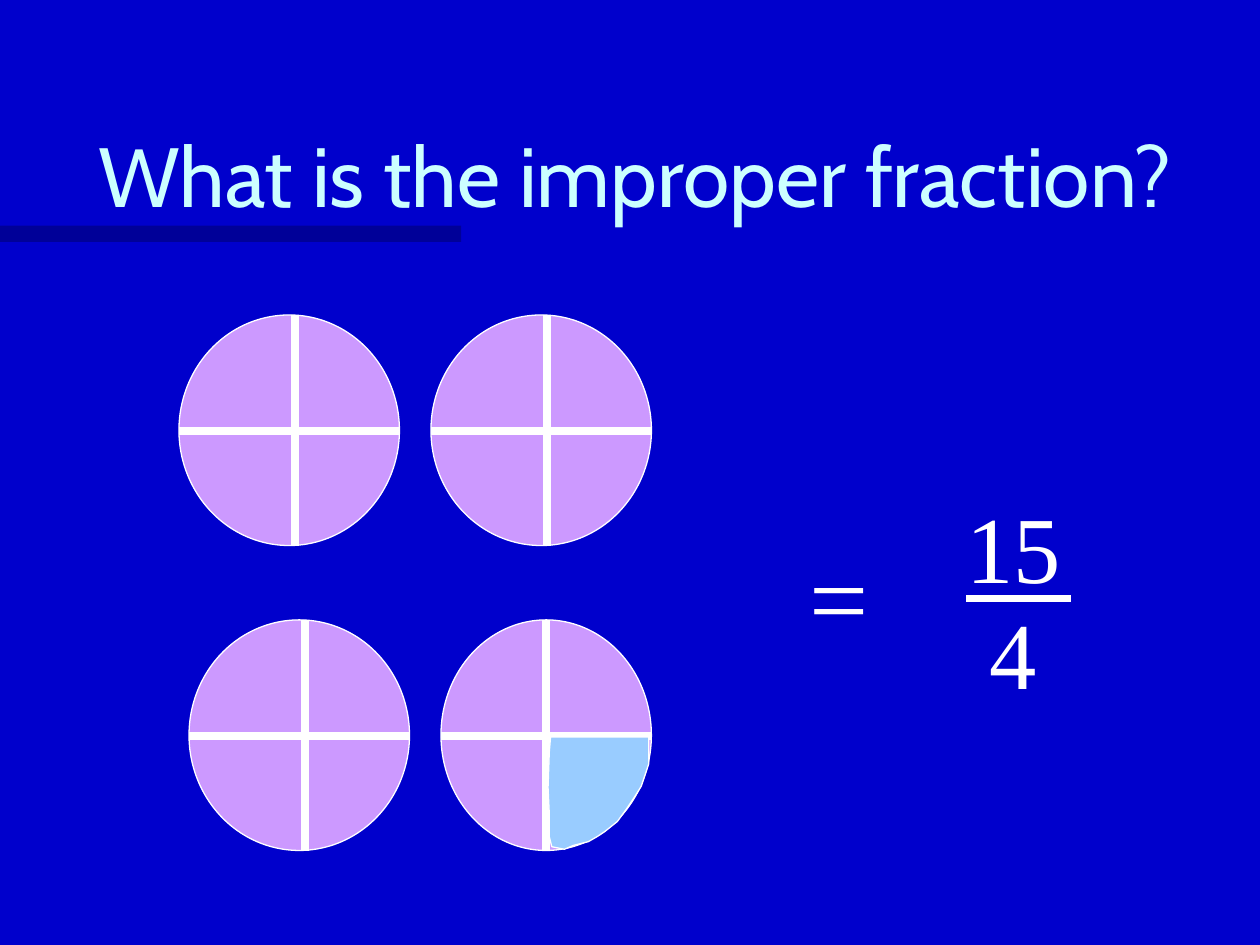
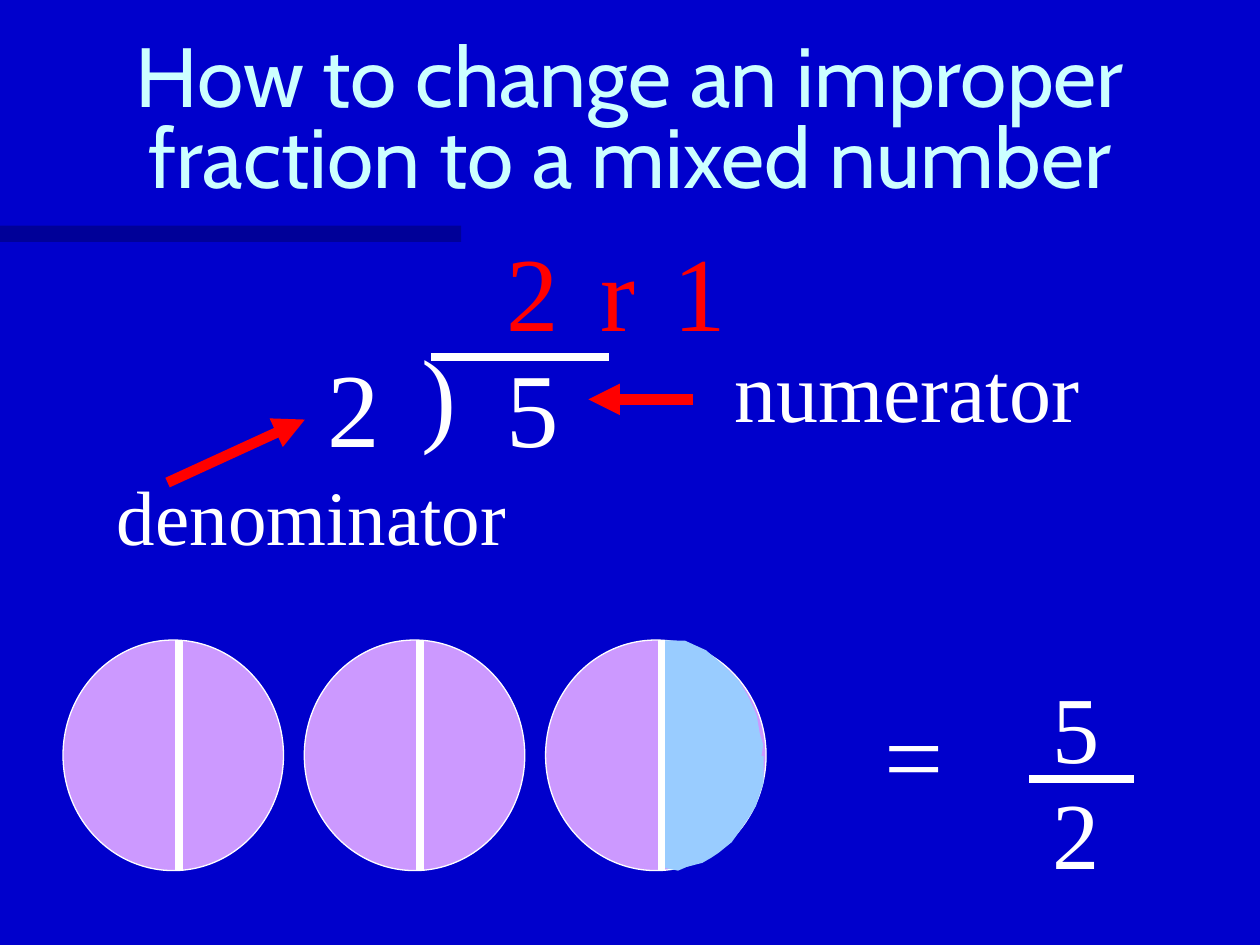
from lxml import etree
from pptx import Presentation
from pptx.dml.color import RGBColor
from pptx.enum.shapes import MSO_CONNECTOR, MSO_SHAPE
from pptx.enum.text import MSO_ANCHOR, MSO_AUTO_SIZE, PP_ALIGN
from pptx.oxml.ns import qn
from pptx.util import Inches, Pt

BACKGROUND, BAND, TITLE = "0000CC", "000066", "CCFFFF"
WHITE, RED, LILAC, SKY = "FFFFFF", "FF0000", "CC99FF", "99CCFF"
TITLE_FONT, BODY_FONT = "Cabin", "Times New Roman"
CIRCLE_WIDTH, CIRCLE_HEIGHT, CUT = 1.75, 1.83, 0.92

# Hand-cut lower right quarter, in hundredths of an inch for a 0.82 x 0.9 box
QUARTER = [(2, 0), (1, 12), (0, 40), (1, 61), (1, 79), (3, 87), (13, 89),
           (20, 86), (32, 83), (39, 79), (45, 75), (55, 67), (63, 56),
           (69, 47), (74, 39), (80, 21), (80, 0)]


def color(hex_string):
    return RGBColor.from_string(hex_string)


def paint(shape, fill, outline=None):
    shape.shadow.inherit = False
    shape.fill.solid()
    shape.fill.fore_color.rgb = color(fill)
    if outline:
        shape.line.color.rgb = color(outline)
        shape.line.width = Pt(0.75)
    else:
        shape.line.fill.background()


def add_line(slide, start, end, hex_string=WHITE, width=4.5, arrow=False):
    line = slide.shapes.add_connector(
        MSO_CONNECTOR.STRAIGHT, *(Inches(v) for v in (*start, *end)))
    line.line.color.rgb = color(hex_string)
    line.line.width = Pt(width)
    if arrow:
        etree.SubElement(line.line._get_or_add_ln(), qn("a:tailEnd"), type="triangle")
    etree.SubElement(line._element.spPr, qn("a:effectLst"))


def style(paragraph, font, size, hex_string):
    paragraph.font.name = font
    paragraph.font.size = Pt(size)
    paragraph.font.color.rgb = color(hex_string)


def add_label(slide, text, left, top, size=60, width=None, height=None, hex_string=WHITE):
    """Text in a box that fits it; by default as wide as its digits."""
    width = width or len(text) * size / 144 + 0.2
    height = height or size / 60 + 0.1
    label = slide.shapes.add_textbox(*(Inches(v) for v in (left, top, width, height)))
    frame = label.text_frame
    frame.word_wrap = False
    frame.auto_size = MSO_AUTO_SIZE.SHAPE_TO_FIT_TEXT
    frame.text = text
    style(frame.paragraphs[0], BODY_FONT, size, hex_string)


def add_titled_slide(prs, text, box, line_spacing=None):
    slide = prs.slides.add_slide(prs.slide_layouts[6])
    slide.background.fill.solid()
    slide.background.fill.fore_color.rgb = color(BACKGROUND)

    # Half-transparent band
    band = slide.shapes.add_shape(MSO_SHAPE.RECTANGLE, 0, Inches(1.79),
                                  Inches(3.66), Inches(0.13))
    paint(band, BAND)
    tint = band._element.spPr.find(qn("a:solidFill"))[0]
    etree.SubElement(tint, qn("a:alpha"), val="50000")

    # Title
    frame = slide.shapes.add_textbox(*(Inches(v) for v in box)).text_frame
    frame.word_wrap = True
    frame.vertical_anchor = MSO_ANCHOR.BOTTOM
    frame.text = text
    title = frame.paragraphs[0]
    title.alignment = PP_ALIGN.CENTER
    if line_spacing:
        title.line_spacing = line_spacing
    style(title, TITLE_FONT, 48, TITLE)
    return slide


def add_circle(slide, left, top, width=CIRCLE_WIDTH):
    circle = slide.shapes.add_shape(
        MSO_SHAPE.OVAL, *(Inches(v) for v in (left, top, width, CIRCLE_HEIGHT)))
    paint(circle, LILAC, WHITE)


def add_upright_cut(slide, x, top):
    add_line(slide, (x, top), (x, top + CIRCLE_HEIGHT))


def add_quartered_circle(slide, left, top, width=CIRCLE_WIDTH, cut=CUT):
    add_circle(slide, left, top, width)
    add_upright_cut(slide, left + cut, top)
    add_line(slide, (left, top + CUT), (left + width, top + CUT))


def add_quarter(slide, left, top, width, height, rotation=0, outline=None):
    points = [(Inches(left + x * width / 82), Inches(top + y * height / 90))
              for x, y in QUARTER]
    builder = slide.shapes.build_freeform(*points[0])
    builder.add_line_segments(points[1:], close=True)
    quarter = builder.convert_to_shape()
    paint(quarter, SKY, outline)
    quarter.rotation = rotation


def add_fraction(slide, numerator, denominator, left, bar_y):
    bar_width = 0.83
    middle = left + bar_width / 2 - 0.04
    for text, top, height in ((numerator, bar_y - 0.92, 1),
                              (denominator, bar_y - 0.08, 1.4)):
        width = len(text) * 0.375 + 0.2
        add_label(slide, text, middle - width / 2, top, 54, width, height)
    add_line(slide, (left, bar_y), (left + bar_width, bar_y))


def add_division(slide, left, top):
    """Long division of 5 by 2 with its arrows and the names of its parts."""
    # Divisor, bracket and dividend
    add_label(slide, "2", left, top)
    add_label(slide, ")", left + 0.75, top - 0.11, width=0.48)
    add_line(slide, (left + 0.92, top + 0.16), (left + 2.33, top + 0.16))
    add_label(slide, "5", left + 1.42, top)
    # Names of the parts
    add_line(slide, (left + 3, top + 0.5), (left + 2.17, top + 0.5), RED, 6, arrow=True)
    add_label(slide, "numerator", left + 3.23, top - 0.03, 48, 2.94)
    add_label(slide, "denominator", left - 1.67, top + 1, 44, 3.29)
    add_line(slide, (left - 1.17, top + 1.16), (left - 0.08, top + 0.66), RED, 6, arrow=True)
    # Quotient and remainder
    for text, offset, width in (("2", 1.42, 0.62), ("r", 2.17, 0.48), ("1", 2.75, 0.62)):
        add_label(slide, text, left + offset, top - 0.92, width=width, hex_string=RED)


def build_improper_fraction(prs):
    slide = add_titled_slide(prs, "What is the improper fraction?",
                             (0.33, 0.58, 9.42, 1.25))
    for left, top in ((1.42, 2.5), (3.42, 2.5), (1.5, 4.92)):
        add_quartered_circle(slide, left, top)
    add_quartered_circle(slide, 3.5, 4.92, width=1.67, cut=0.83)
    add_quarter(slide, 4.35, 5.85, 0.82, 0.9, outline=WHITE)
    add_label(slide, "=", 6.33, 4.17, width=0.67)
    add_fraction(slide, "15", "4", 7.67, 4.75)


def build_mixed_number(prs):
    slide = add_titled_slide(prs, "How to change an improper fraction to a mixed number",
                             (0, 0, 10, 1.67), line_spacing=0.8)
    add_division(slide, 2.5, 2.67)

    # Halved circles, the last with one half left over
    top = 5.08
    lefts = [0.5 + 1.915 * i for i in range(3)]
    for left in lefts:
        add_circle(slide, left, top)
    add_quarter(slide, 5.16, 5.16, 1, 0.84, rotation=270.9)
    add_quarter(slide, 5.25, 6, 0.83, 0.92)
    for left in lefts:
        add_upright_cut(slide, left + CUT, top)

    add_label(slide, "=", 6.92, 5.42, width=0.67)
    add_fraction(slide, "5", "2", 8.17, 6.18)


def main():
    prs = Presentation()
    prs.slide_width, prs.slide_height = Inches(10), Inches(7.5)
    build_improper_fraction(prs)
    build_mixed_number(prs)
    prs.save("out.pptx")


if __name__ == "__main__":
    main()
